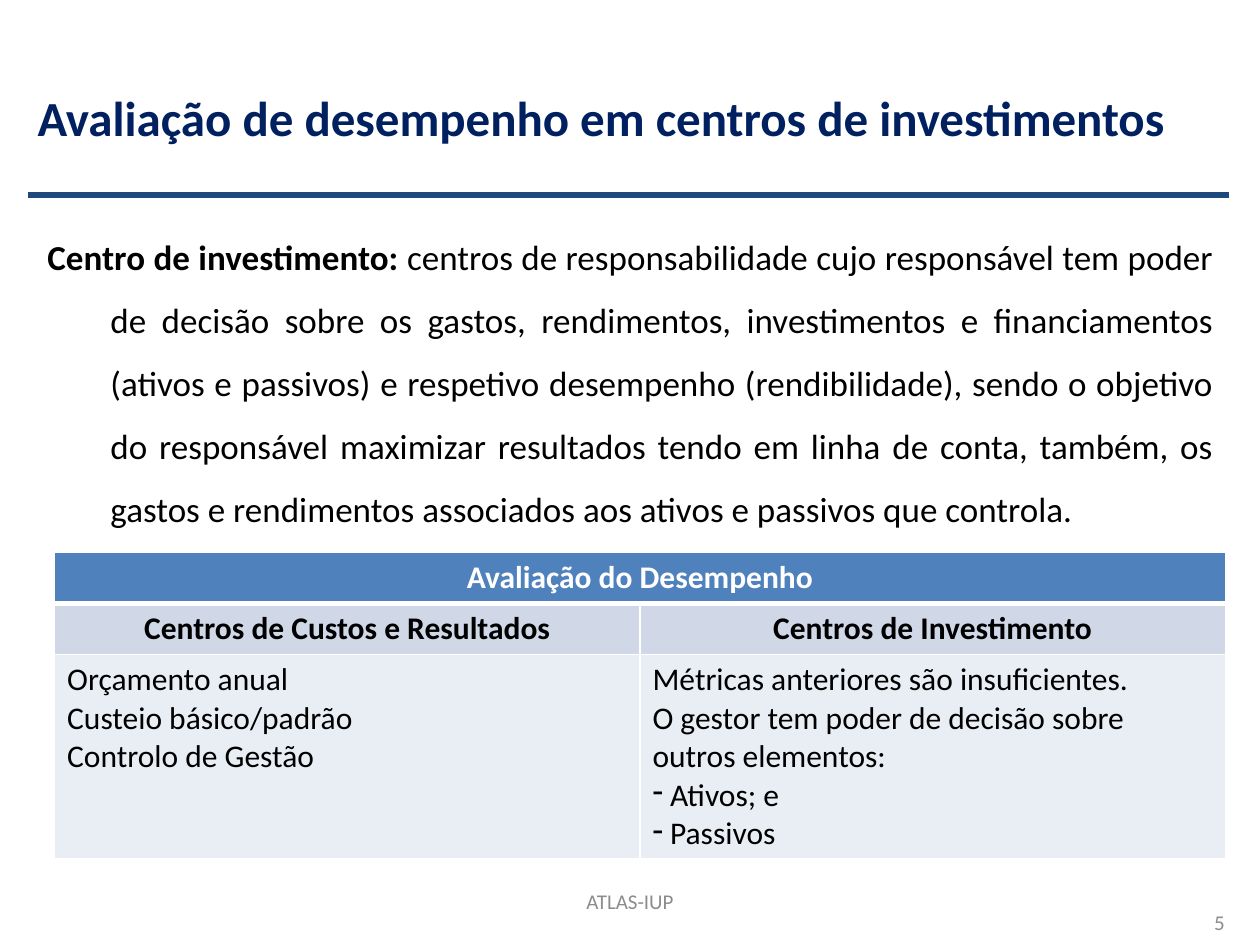
"""Builds the slide on performance evaluation in investment centres."""
from lxml.etree import SubElement
from pptx import Presentation
from pptx.dml.color import RGBColor
from pptx.enum.shapes import MSO_CONNECTOR
from pptx.enum.text import MSO_ANCHOR, PP_ALIGN
from pptx.oxml import parse_xml
from pptx.oxml.ns import nsdecls, qn
from pptx.util import Pt

TITLE = "Avaliação de desempenho em centros de investimentos"
TERM = "Centro de investimento: "
DEFINITION = (
    "centros de responsabilidade cujo responsável tem poder de decisão sobre os gastos, "
    "rendimentos, investimentos e financiamentos (ativos e passivos) e respetivo desempenho "
    "(rendibilidade), sendo o objetivo do responsável maximizar resultados tendo em linha de "
    "conta, também, os gastos e rendimentos associados aos ativos e passivos que controla."
)
FOOTER = "ATLAS-IUP"
PAGE = "5"
HEADING = "Avaliação do Desempenho"
CENTRES = {
    "Centros de Custos e Resultados": [
        "Orçamento anual", "Custeio básico/padrão", "Controlo de Gestão"],
    "Centros de Investimento": [
        "Métricas anteriores são insuficientes.",
        "O gestor tem poder de decisão sobre outros elementos:",
        "- Ativos; e", "- Passivos"],
}

TITLE_FONT = {"size": Pt(28), "bold": True, "color": "002060"}
TERM_FONT = {"size": Pt(20), "bold": True, "color": "000000"}
DEFINITION_FONT = {**TERM_FONT, "bold": False}
FOOTER_FONT = {"size": Pt(12), "bold": False, "color": "8C8C8C"}
HEADING_FONT = {"size": Pt(18), "bold": True, "color": "FFFFFF"}
CENTRE_FONT = {**HEADING_FONT, "color": "000000"}
METRIC_FONT = {**CENTRE_FONT, "bold": False}

TABLE_LEFT, TABLE_TOP, TABLE_WIDTH = 31.2, 315.7, 669
ROW_HEIGHTS = (29.2, 29.2, 116.6)


def rgb(value):
    return RGBColor.from_string(value)


def add_run(paragraph, wording, font):
    run = paragraph.add_run()
    run.text = wording
    for key, value in {"name": "Calibri", **font}.items():
        if key == "color":
            run.font.color.rgb = rgb(value)
        else:
            setattr(run.font, key, value)


def add_text(slide, box, runs, anchor=MSO_ANCHOR.MIDDLE, **layout):
    frame = slide.shapes.add_textbox(*map(Pt, box)).text_frame
    frame.word_wrap = True
    frame.vertical_anchor = anchor
    paragraph = frame.paragraphs[0]
    for key, value in layout.items():
        setattr(paragraph, key, value)
    for wording, font in runs:
        add_run(paragraph, wording, font)
    return paragraph


def set_indent(paragraph, margin, indent):
    properties = paragraph._p.get_or_add_pPr()
    properties.set("marL", str(Pt(margin)))
    properties.set("indent", str(Pt(indent)))
    return properties


def fill_cell(cell, fill, lines, font, alignment=PP_ALIGN.LEFT, bottom=1):
    cell.fill.solid()
    cell.fill.fore_color.rgb = rgb(fill)
    for position, (side, width) in enumerate(zip("LRTB", (1, 1, 1, bottom))):
        cell._tc.get_or_add_tcPr().insert(position, parse_xml(
            f'<a:ln{side} {nsdecls("a")} w="{Pt(width)}"><a:solidFill>'
            f'<a:srgbClr val="FFFFFF"/></a:solidFill></a:ln{side}>'))
    frame = cell.text_frame
    for number, line in enumerate(lines):
        paragraph = frame.add_paragraph() if number else frame.paragraphs[0]
        paragraph.alignment = alignment
        if line.startswith("-"):
            SubElement(set_indent(paragraph, 0, 0), qn("a:buChar")).set("char", "-")
        add_run(paragraph, line.removeprefix("-"), font)


def add_centres(slide):
    box = (TABLE_LEFT, TABLE_TOP, TABLE_WIDTH, sum(ROW_HEIGHTS))
    table = slide.shapes.add_table(
        len(ROW_HEIGHTS), len(CENTRES), *map(Pt, box)).table
    for row, height in zip(table.rows, ROW_HEIGHTS):
        row.height = Pt(height)
    for column, (centre, metrics) in enumerate(CENTRES.items()):
        table.columns[column].width = Pt(TABLE_WIDTH / len(CENTRES))
        heading = [] if column else [HEADING]
        fill_cell(table.cell(0, column), "4F81BD", heading, HEADING_FONT, PP_ALIGN.CENTER, 3)
        fill_cell(table.cell(1, column), "D0D8E8", [centre], CENTRE_FONT, PP_ALIGN.CENTER)
        fill_cell(table.cell(2, column), "E9EDF4", metrics, METRIC_FONT)
    table.cell(0, 0).merge(table.cell(0, len(CENTRES) - 1))


def main():
    deck = Presentation()
    deck.slide_width, deck.slide_height = Pt(720), Pt(540)
    slide = deck.slides.add_slide(deck.slide_layouts[6])

    rule = slide.shapes.add_connector(
        MSO_CONNECTOR.STRAIGHT, *map(Pt, (16, 111.4, 702, 111.4)))
    rule.line.color.rgb = rgb("1F497D")
    rule.line.width = Pt(3.75)
    SubElement(rule._element.spPr, qn("a:effectLst"))

    add_text(slide, (479, 512.6, 228, 28.8), [(PAGE, FOOTER_FONT)], alignment=PP_ALIGN.RIGHT)
    add_text(slide, (14.4, 21.6, 705.6, 90), [(TITLE, TITLE_FONT)])
    definition = add_text(
        slide, (20, 118.8, 680.4, 383.8),
        [(TERM, TERM_FONT), (DEFINITION, DEFINITION_FONT)], MSO_ANCHOR.TOP,
        alignment=PP_ALIGN.JUSTIFY, line_spacing=1.5, space_before=Pt(4))
    set_indent(definition, 36, -36)
    add_centres(slide)
    add_text(slide, (246, 500.4, 228, 28.8), [(FOOTER, FOOTER_FONT)], alignment=PP_ALIGN.CENTER)
    deck.save("out.pptx")


if __name__ == "__main__":
    main()
